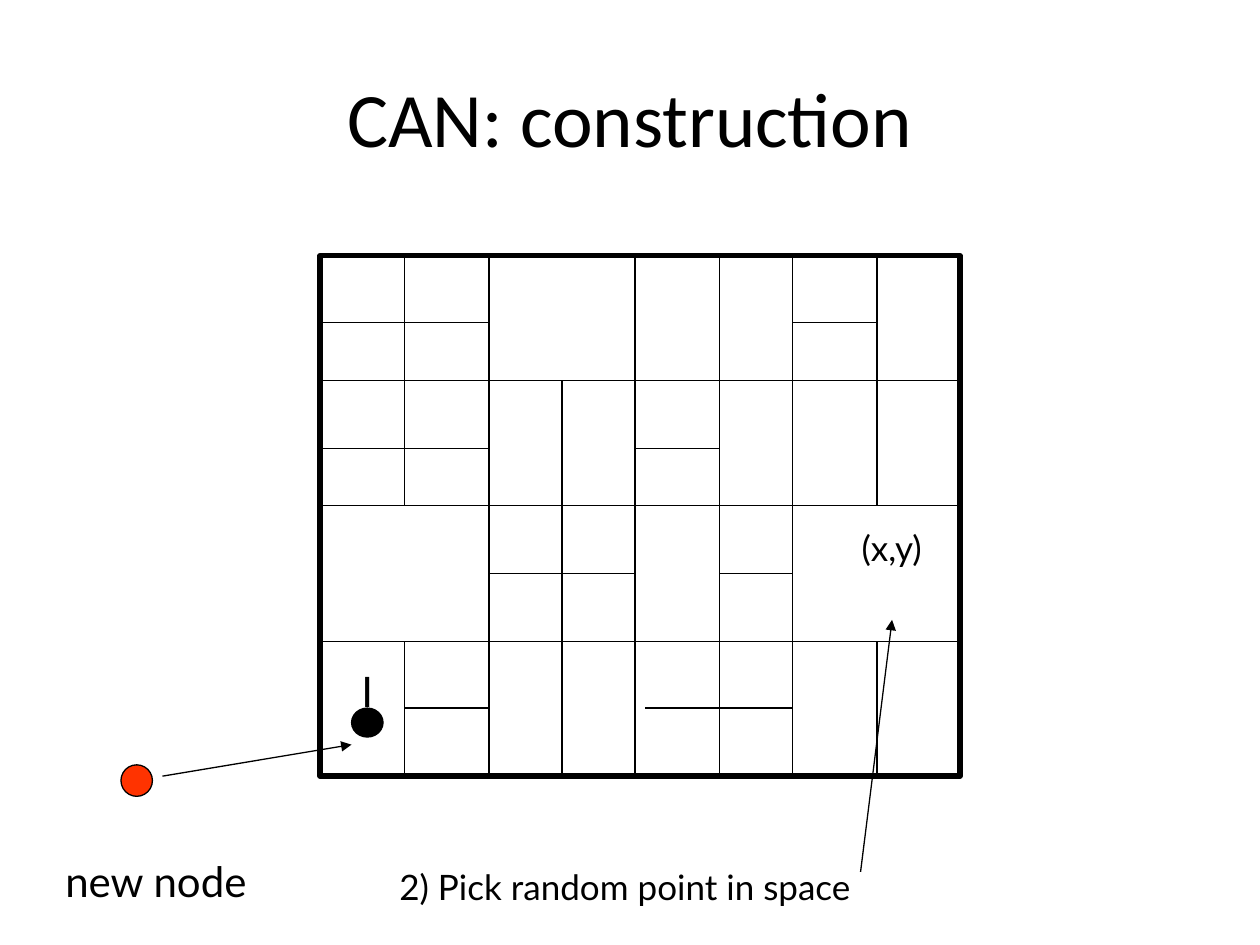
import pptx
import pptx.util
import pptx.dml.color
import pptx.enum.shapes
import pptx.enum.text
import pptx.oxml
import pptx.oxml.ns

TITLE = "CAN: construction"
COLS = [2.54, 3.21, 3.88, 4.46, 5.04, 5.71, 6.29, 6.96, 7.62]
ROWS = [2.03, 2.56, 3.02, 3.56, 4.01, 4.55, 5.09, 5.62, 6.16]
DOWN = [
    (1, 0, 4), (1, 6, 8), (2, 0, 8), (3, 2, 8), (4, 0, 8),
    (5, 0, 8), (6, 0, 8), (7, 0, 4), (7, 6, 8),
]
ACROSS = [
    (2, 0, 8), (4, 0, 8), (6, 0, 8),
    (1, 0, 2), (1, 6, 7), (3, 0, 2), (3, 4, 5),
    (5, 2, 4), (5, 5, 6), (7, 1, 2),
]
SHORT = (5.12, 5.62, 6.29, 5.62)
ARROWS = [(6.83, 6.92, 7.08, 4.92), (1.29, 6.16, 2.79, 5.91)]
NODES = [(2.79, 5.62, 0.25, 0.23, "000000"), (0.96, 6.07, 0.25, 0.25, "FF3300")]
LABELS = [
    (" 2) Pick random point in space", 3, 6.82, 4.33, 0.43, 20, True),
    ("I", 2.77, 5.23, 0.33, 0.5, 24, False),
    ("(x,y)", 6.74, 4.13, 0.77, 0.43, 20, False),
    ("new node", 0.42, 6.74, 1.64, 0.5, 24, False),
]

KINDS = pptx.enum.shapes.MSO_SHAPE


def color(code):
    return pptx.dml.color.RGBColor.from_string(code)


def place(*sizes):
    return [pptx.util.Inches(size) for size in sizes]


def style(frame, font, size):
    for run in frame.paragraphs[0].runs:
        run.font.name = font
        run.font.size = pptx.util.Pt(size)
        run.font.color.rgb = color("000000")


def shape(slide, kind, box, fill, width):
    item = slide.shapes.add_shape(kind, *place(*box))
    item.shadow.inherit = False
    if fill:
        item.fill.solid()
        item.fill.fore_color.rgb = color(fill)
    else:
        item.fill.background()
    item.line.color.rgb = color("000000")
    item.line.width = pptx.util.Pt(width)


def line(slide, ends, head=False):
    kind = pptx.enum.shapes.MSO_CONNECTOR.STRAIGHT
    item = slide.shapes.add_connector(kind, *place(*ends))
    item.line.color.rgb = color("000000")
    item.line.width = pptx.util.Pt(0.75)
    if head:
        tip = pptx.oxml.parse_xml(
            "<a:tailEnd %s type='triangle'/>" % pptx.oxml.ns.nsdecls("a"))
        item.line._get_or_add_ln().append(tip)
    flat = pptx.oxml.parse_xml("<a:effectLst %s/>" % pptx.oxml.ns.nsdecls("a"))
    item._element.spPr.append(flat)


def label(slide, text, left, top, width, height, size, wrap):
    frame = slide.shapes.add_textbox(*place(left, top, width, height)).text_frame
    frame.word_wrap = wrap
    frame.auto_size = pptx.enum.text.MSO_AUTO_SIZE.SHAPE_TO_FIT_TEXT
    frame.text = text
    style(frame, "Lato", size)


def main():
    deck = pptx.Presentation()
    deck.slide_width, deck.slide_height = place(10, 7.5)
    slide = deck.slides.add_slide(deck.slide_layouts[5])

    title = slide.shapes.title
    title.left, title.top, title.width, title.height = place(0.5, 0.3, 9, 1.25)
    frame = title.text_frame
    frame.text = TITLE
    frame.vertical_anchor = pptx.enum.text.MSO_ANCHOR.MIDDLE
    frame.paragraphs[0].alignment = pptx.enum.text.PP_ALIGN.CENTER
    style(frame, "Calibri", 44)

    space = (COLS[0], ROWS[0], COLS[-1] - COLS[0], ROWS[-1] - ROWS[0])
    shape(slide, KINDS.RECTANGLE, space, None, 3)
    for col, top, end in DOWN:
        line(slide, (COLS[col], ROWS[top], COLS[col], ROWS[end]))
    for row, left, end in ACROSS:
        line(slide, (COLS[left], ROWS[row], COLS[end], ROWS[row]))
    line(slide, SHORT)

    for *box, fill in NODES:
        shape(slide, KINDS.OVAL, box, fill, 0.75)
    for ends in ARROWS:
        line(slide, ends, True)
    for item in LABELS:
        label(slide, *item)

    deck.save("out.pptx")


if __name__ == "__main__":
    main()
